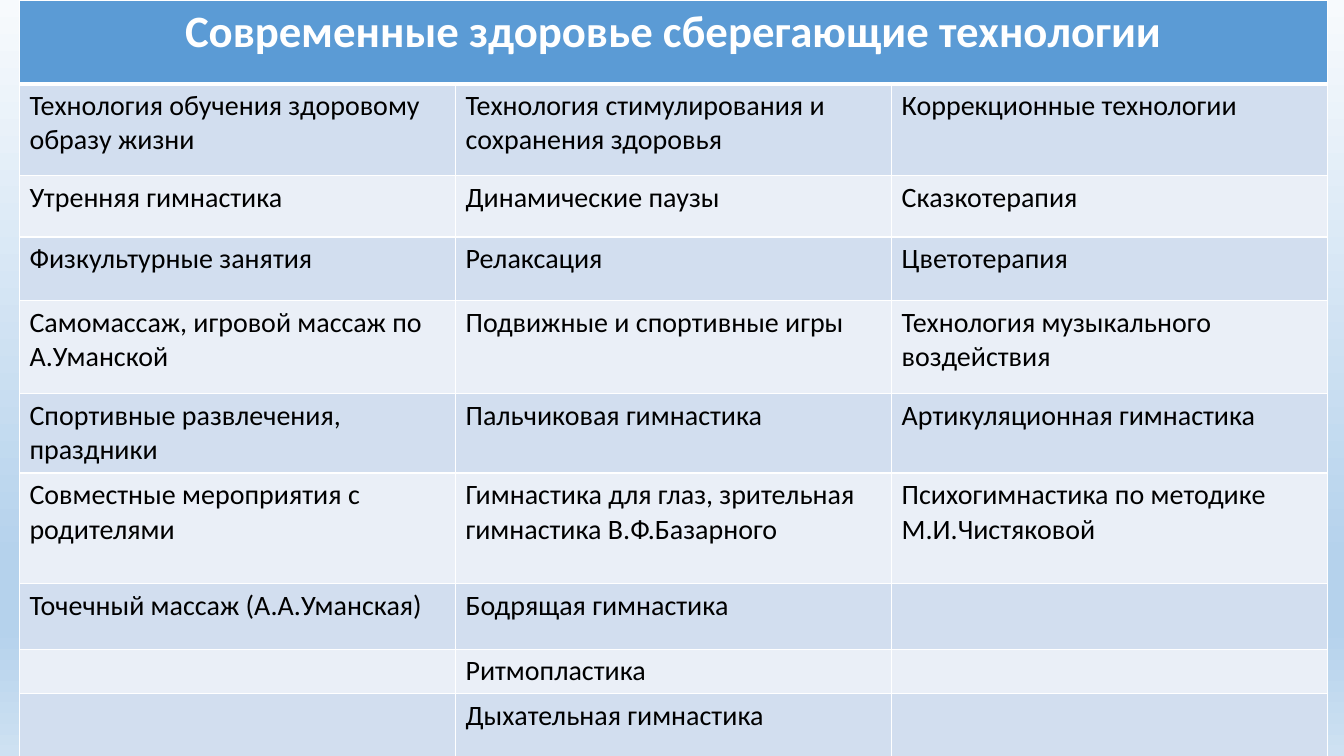
from lxml.etree import SubElement as Sub
from pptx import Presentation
from pptx.dml.color import RGBColor as RGB
from pptx.enum.text import PP_ALIGN as Align
from pptx.oxml import parse_xml
from pptx.oxml.ns import nsdecls, qn
from pptx.util import Cm, Pt

BLUE = RGB(0x5B, 0x9B, 0xD5)
BANDS = RGB(0xD2, 0xDE, 0xEF), RGB(0xEA, 0xEF, 0xF7)
WHITE = RGB(0xFF, 0xFF, 0xFF)
BLACK = RGB(0, 0, 0)
SKY = [(0, RGB(0xF7, 0xFA, 0xFD)), (74, RGB(0xB5, 0xD2, 0xEC)),
       (83, RGB(0xB5, 0xD2, 0xEC)), (100, RGB(0xCE, 0xE1, 0xF2))]

HEAD = {"name": "Calibri", "size": Pt(32), "bold": True}
BODY = {"name": "Calibri", "size": Pt(20), "bold": False}

TITLE = "Современные здоровье сберегающие технологии"
ROWS = [
    (2.31, "Технология обучения здоровому образу жизни",
     "Технология стимулирования и сохранения здоровья", "Коррекционные технологии"),
    (1.55, "Утренняя гимнастика", "Динамические паузы", "Сказкотерапия"),
    (1.6, "Физкультурные занятия", "Релаксация", "Цветотерапия"),
    (2.34, "Самомассаж, игровой массаж по А.Уманской",
     "Подвижные и спортивные игры", "Технология музыкального воздействия"),
    (2.01, "Спортивные развлечения, праздники",
     "Пальчиковая гимнастика", "Артикуляционная гимнастика"),
    (2.79, "Совместные мероприятия с родителями",
     "Гимнастика для глаз, зрительная гимнастика В.Ф.Базарного",
     "Психогимнастика по методике М.И.Чистяковой"),
    (1.65, "Точечный массаж (А.А.Уманская)", "Бодрящая гимнастика", ""),
    (1.1, "", "Ритмопластика", ""),
    (1.8, "", "Дыхательная гимнастика", ""),
]


def paint_sky(slide):
    """Fill the slide background with the vertical sky gradient."""
    fill = slide.background.fill
    fill.gradient()
    fill.gradient_angle = 270
    stops = slide.element.find(".//" + qn("a:gsLst"))
    stops.clear()
    for place, tint in SKY:
        stop = Sub(stops, qn("a:gs"), pos=str(place * 1000))
        Sub(stop, qn("a:srgbClr"), val=str(tint))


def set_lines(cell, top, foot):
    """Draw white borders with the given top and bottom widths in points."""
    props = cell._tc.get_or_add_tcPr()
    sides = {"L": 1, "R": 1, "T": top, "B": foot}
    for spot, (side, width) in enumerate(sides.items()):
        props.insert(spot, parse_xml(
            f'<a:ln{side} {nsdecls("a")} w="{Pt(width)}"><a:solidFill>'
            f'<a:srgbClr val="{WHITE}"/></a:solidFill></a:ln{side}>'))


def set_cell(cell, text, fill, ink, style):
    """Fill a cell and write its text in the given style."""
    cell.fill.solid()
    cell.fill.fore_color.rgb = fill
    if text:
        cell.text = text
        font = cell.text_frame.paragraphs[0].runs[0].font
        font.color.rgb = ink
        for name, value in style.items():
            setattr(font, name, value)


def add_grid(slide, left, top, width):
    """Place the technology table at the given corner and width."""
    highs = [2.11] + [row[0] for row in ROWS]
    grid = slide.shapes.add_table(len(highs), 3, left, top, width, Cm(sum(highs))).table
    for row, high in zip(grid.rows, highs):
        row.height = Cm(high)
    for index, row in enumerate(grid.rows):
        for cell in row.cells:
            set_lines(cell, 3 if index == 1 else 1, 3 if index == 0 else 1)
    head = grid.cell(0, 0)
    head.merge(grid.cell(0, 2))
    set_cell(head, TITLE, BLUE, WHITE, HEAD)
    head.text_frame.paragraphs[0].alignment = Align.CENTER
    for index, (_, *texts) in enumerate(ROWS):
        for col, text in enumerate(texts):
            set_cell(grid.cell(index + 1, col), text, BANDS[index % 2], BLACK, BODY)


def main():
    """Build and save the slide."""
    deck = Presentation()
    deck.slide_width, deck.slide_height = Cm(33.87), Cm(19.05)
    slide = deck.slides.add_slide(deck.slide_layouts[6])
    paint_sky(slide)
    add_grid(slide, Cm(0.49), Cm(0), Cm(32.97))
    deck.save("out.pptx")


if __name__ == "__main__":
    main()
